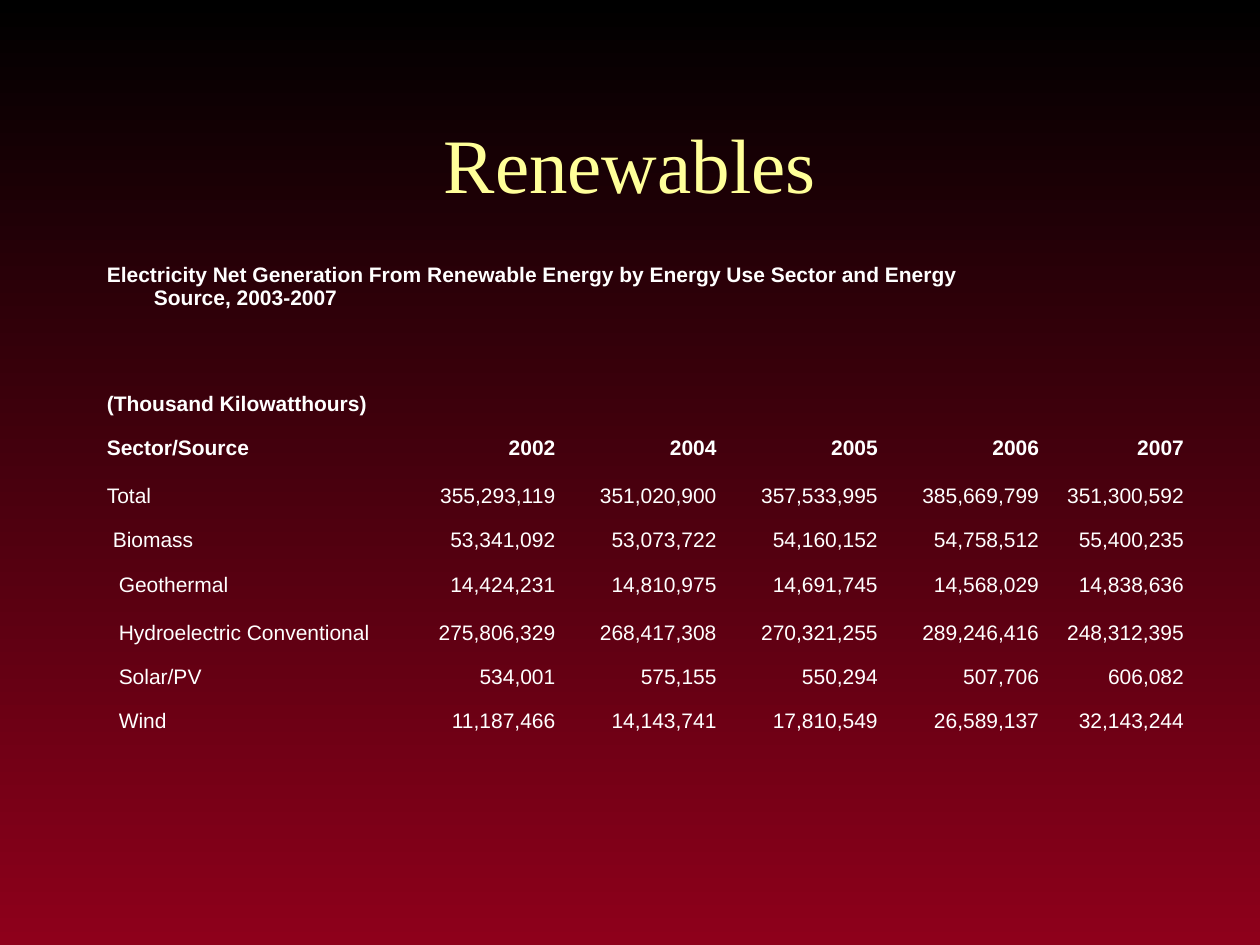
from pptx import Presentation
from pptx.dml.color import RGBColor as Rgb
from pptx.enum.text import MSO_ANCHOR as Anchor, PP_ALIGN as Align
from pptx.util import Cm, Pt

COLORS = {"top": "000000", "bottom": "8E001B", "title": "FFFF99", "text": "FFFFFF"}
NO_STYLE = "{2D5ABB26-0587-4C30-8999-92F81FD0307C}"
CAPTION = ("Electricity Net Generation From Renewable Energy by Energy Use Sector "
           "and Energy Source, 2003-2007")
UNIT = "(Thousand Kilowatthours)"
HEADER = ["Sector/Source", "2002", "2004", "2005", "2006", "2007"]
SOURCES = [
    (0, ["Total", "355,293,119", "351,020,900", "357,533,995", "385,669,799", "351,300,592"]),
    (1, ["Biomass", "53,341,092", "53,073,722", "54,160,152", "54,758,512", "55,400,235"]),
    (2, ["Geothermal", "14,424,231", "14,810,975", "14,691,745", "14,568,029", "14,838,636"]),
    (2, ["Hydroelectric Conventional", "275,806,329", "268,417,308", "270,321,255",
         "289,246,416", "248,312,395"]),
    (2, ["Solar/PV", "534,001", "575,155", "550,294", "507,706", "606,082"]),
    (2, ["Wind", "11,187,466", "14,143,741", "17,810,549", "26,589,137", "32,143,244"]),
]
COLUMN_WIDTHS = [6.3] + [3.25] * 4 + [2.92]
ROW_HEIGHTS = [2.13, 2.13, 0.89, 0.97, 0.89, 0.89, 0.97, 0.89, 0.89]
HANGING = 0.95
LEVEL_INDENT = 0.12


def style_font(font, name, size, color, bold=False):
    font.name = name
    font.size = Pt(size)
    font.bold = bold
    font.color.rgb = Rgb.from_string(COLORS[color])


def paint_background(page):
    fill = page.background.fill
    fill.gradient()
    fill.gradient_angle = 270
    for stop, position, color in zip(fill.gradient_stops, (0, 1), ("top", "bottom")):
        stop.position = position
        stop.color.rgb = Rgb.from_string(COLORS[color])


def add_title(page, text):
    box = page.shapes.add_textbox(Cm(1.9), Cm(1.7), Cm(21.6), Cm(3.18))
    frame = box.text_frame
    frame.word_wrap = True
    frame.vertical_anchor = Anchor.MIDDLE
    frame.text = text
    para = frame.paragraphs[0]
    para.alignment = Align.CENTER
    style_font(para.runs[0].font, "Times New Roman", 44, "title")


def write_cell(cell, text, bold=False, align=Align.LEFT, level=0):
    cell.vertical_anchor = Anchor.BOTTOM
    cell.text_frame.text = text
    para = cell.text_frame.paragraphs[0]
    para.alignment = align
    properties = para._p.get_or_add_pPr()
    properties.set("marL", str(Cm(HANGING + LEVEL_INDENT * level)))
    properties.set("indent", str(Cm(-HANGING)))
    style_font(para.runs[0].font, "Arial", 12, "text", bold)


def write_row(table, row, texts, bold=False, level=0):
    for column, text in enumerate(texts):
        if column == 0:
            write_cell(table.cell(row, column), text, bold, level=level)
        else:
            write_cell(table.cell(row, column), text, bold, Align.RIGHT)


def add_generation_table(page):
    frame = page.shapes.add_table(len(ROW_HEIGHTS), len(COLUMN_WIDTHS), Cm(1.9), Cm(4.25),
                                  Cm(sum(COLUMN_WIDTHS)), Cm(sum(ROW_HEIGHTS)))
    table = frame.table
    table.first_row = False
    table.horz_banding = False
    table._tbl.tblPr.find("{*}tableStyleId").text = NO_STYLE
    for column, width in zip(table.columns, COLUMN_WIDTHS):
        column.width = Cm(width)
    for row, height in zip(table.rows, ROW_HEIGHTS):
        row.height = Cm(height)
    for cell in table.iter_cells():
        cell.fill.background()

    table.cell(0, 0).merge(table.cell(0, 4))
    write_row(table, 0, [CAPTION], bold=True)
    write_row(table, 1, [UNIT], bold=True)
    write_row(table, 2, HEADER, bold=True)
    for row, (level, texts) in enumerate(SOURCES, start=3):
        write_row(table, row, texts, level=level)


def main():
    deck = Presentation()
    deck.slide_width = Cm(25.4)
    deck.slide_height = Cm(19.05)
    page = deck.slides.add_slide(deck.slide_layouts[6])
    paint_background(page)
    add_title(page, "Renewables")
    add_generation_table(page)
    deck.save("out.pptx")


if __name__ == "__main__":
    main()
